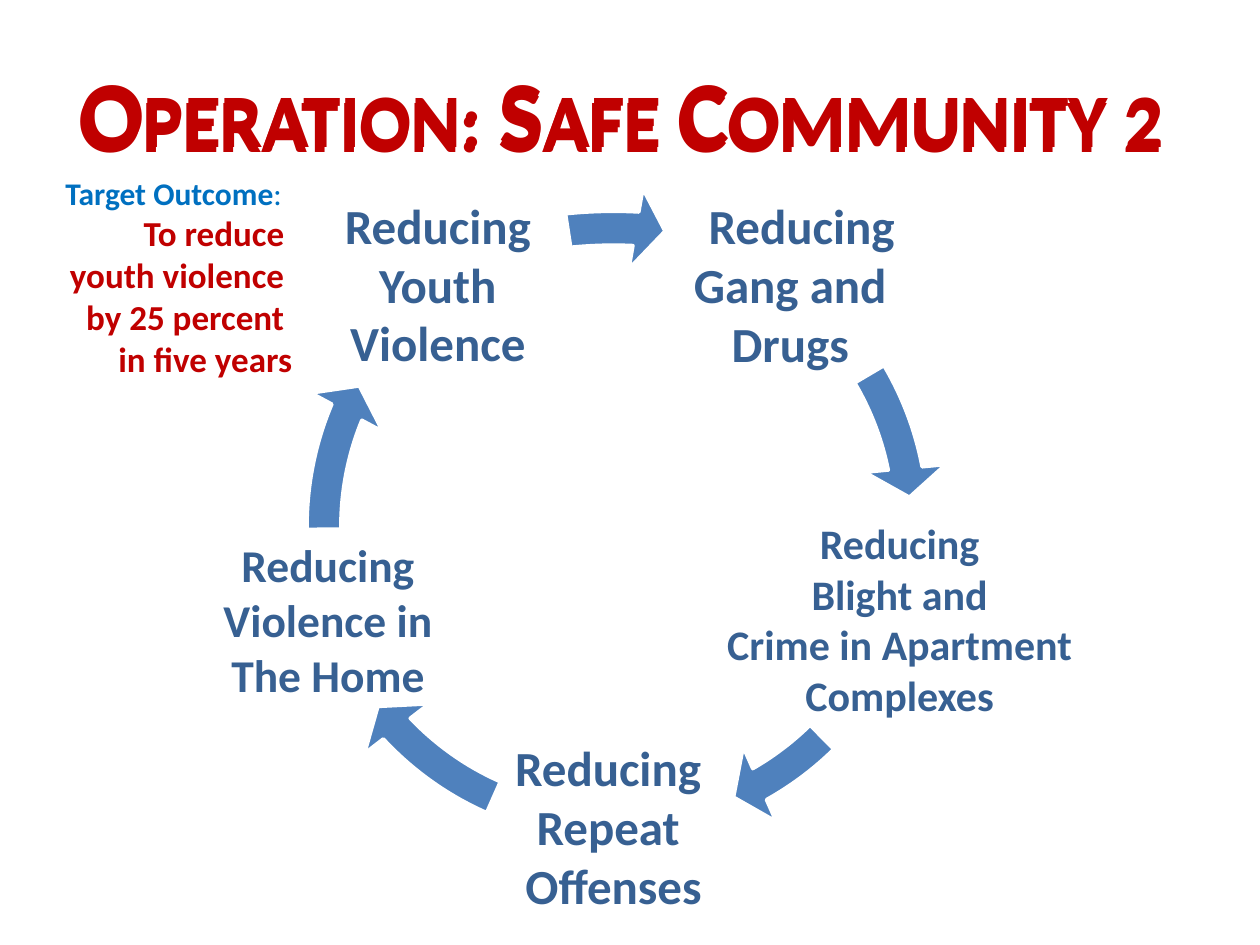
import pptx
import pptx.dml.color
import pptx.enum.shapes
import pptx.enum.text
import pptx.oxml.ns
import pptx.util
from lxml import etree

Pt = pptx.util.Pt
RGBColor = pptx.dml.color.RGBColor
Align = pptx.enum.text.PP_ALIGN
Anchor = pptx.enum.text.MSO_ANCHOR
AutoSize = pptx.enum.text.MSO_AUTO_SIZE

WHITE = RGBColor(0xFF, 0xFF, 0xFF)
RED = RGBColor(0xC0, 0x00, 0x00)
SKY = RGBColor(0x00, 0x70, 0xC0)
NAVY = RGBColor(0x37, 0x60, 0x92)
STEEL = RGBColor(0x4F, 0x81, 0xBD)

HEADLINE = "Operation: Safe Community 2 "

# left, top, width, height, font size, lines, first-line indent
GOALS = [
    (380.2, 110.9, 142.6, 103, 28, ["Reducing Gang and", "Drugs"], 13),
    (409.7, 284.4, 208.8, 138.2, 24,
     ["Reducing", "Blight and", "Crime in Apartment Complexes"], 0),
    (281.5, 420.5, 138.2, 103, 28, ["Reducing ", "Repeat ", "Offenses"], 0),
    (98.6, 302.4, 177.8, 103, 26, ["Reducing", "Violence in", "The Home"], 0),
    (175.7, 104.4, 149, 115.2, 28, ["Reducing", "Youth Violence"], 0),
]

RING = (157.7, 107.3, 385.9, 385.9)
# box, end angle, start angle (in adjustment units)
ARROWS = [
    (RING, 209.37, 197.66),
    (RING, 36.34, 27.29),
    (RING, 82.11, 68.3),
    ((162, 108, 385.9, 385.9), 121.59, 107.7),
    ((119.5, 107.3, 462.2, 385.9), 164.59, 156.75),
]


class CycleSlide:
    font = "Calibri"
    shaft, head, head_width = 0.05, 3.36, 0.06

    def __init__(self, deck):
        self.slide = deck.slides.add_slide(deck.slide_layouts[1])

    def add_text(self, paragraph, words, *, size, color, bold=True,
                 align=Align.CENTER, small_caps=False):
        """Append one formatted run to the paragraph."""
        paragraph.alignment = align
        paragraph.space_before = Pt(0)
        run = paragraph.add_run()
        run.text = words
        run.font.name = self.font
        run.font.size = Pt(size)
        run.font.bold = bold
        run.font.color.rgb = color
        if small_caps:
            run._r.get_or_add_rPr().set("cap", "small")

    def place(self, holder, left, top, width, height, anchor):
        """Move a text holder and return its wrapping, fixed-size frame."""
        holder.left, holder.top = Pt(left), Pt(top)
        holder.width, holder.height = Pt(width), Pt(height)
        frame = holder.text_frame
        frame.word_wrap = True
        frame.auto_size = AutoSize.NONE
        frame.vertical_anchor = anchor
        return frame

    def text_box(self, left, top, width, height, anchor):
        box = self.slide.shapes.add_textbox(0, 0, 0, 0)
        return self.place(box, left, top, width, height, anchor)

    def headline(self, frame):
        self.add_text(frame.paragraphs[0], HEADLINE, size=54, color=RED,
                      small_caps=True)

    def title(self):
        self.headline(self.place(self.slide.shapes.title, 30.2, 41.8, 660.2,
                                 41.8, Anchor.MIDDLE))

    def title_echo(self):
        """Second headline, slightly offset, that thickens the title."""
        self.headline(self.text_box(-0.7, 29.5, 720, 72.7, Anchor.TOP))

    def outcome(self):
        frame = self.place(self.slide.placeholders[1], 30.2, 95.8, 144, 120.2,
                           Anchor.TOP)
        label = frame.paragraphs[0]
        self.unbullet(label)
        self.add_text(label, "Target Outcome", size=18, color=SKY,
                      align=Align.LEFT)
        self.add_text(label, ":", size=18, color=SKY, bold=False,
                      align=Align.LEFT)
        for words in ("To reduce ", "youth violence ", "by 25 percent ",
                      "in five years"):
            line = frame.add_paragraph()
            self.unbullet(line)
            self.add_text(line, words, size=20, color=RED, align=Align.RIGHT)

    def unbullet(self, paragraph):
        etree.SubElement(paragraph._p.get_or_add_pPr(),
                         pptx.oxml.ns.qn("a:buNone"))

    def goal(self, left, top, width, height, size, lines, indent):
        frame = self.text_box(left, top, width, height, Anchor.MIDDLE)
        frame.margin_left = frame.margin_right = Pt(3)
        frame.margin_top = frame.margin_bottom = Pt(3)
        for index, words in enumerate(lines):
            paragraph = frame.add_paragraph() if index else frame.paragraphs[0]
            if indent and not index:
                paragraph._p.get_or_add_pPr().set("indent", str(int(Pt(indent))))
            self.add_text(paragraph, words, size=size, color=NAVY)

    def arrow(self, box, end, start):
        arrow = self.slide.shapes.add_shape(
            pptx.enum.shapes.MSO_SHAPE.CIRCULAR_ARROW, *map(Pt, box))
        values = (self.shaft, self.head, end, start, self.head_width)
        for index, value in enumerate(values):
            arrow.adjustments[index] = value
        arrow.shadow.inherit = False
        arrow.fill.solid()
        arrow.fill.fore_color.rgb = STEEL
        arrow.line.color.rgb = WHITE
        arrow.line.width = Pt(2)


def main():
    deck = pptx.Presentation()
    deck.slide_width, deck.slide_height = Pt(720), Pt(540)
    cycle = CycleSlide(deck)
    for goal, arrow in zip(GOALS, ARROWS):
        cycle.goal(*goal)
        cycle.arrow(*arrow)
    cycle.title_echo()
    cycle.title()
    cycle.outcome()
    deck.save("out.pptx")


if __name__ == "__main__":
    main()
